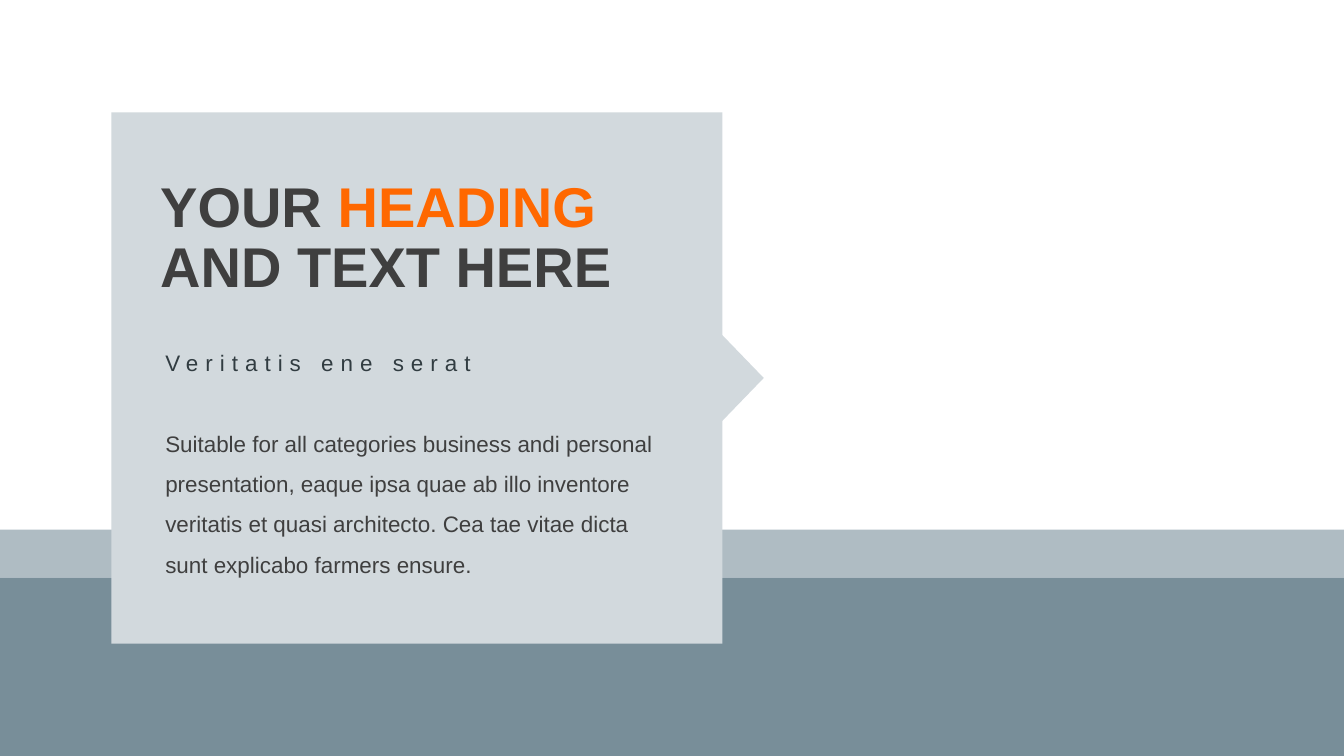
from lxml import etree
from pptx import Presentation
from pptx.dml.color import RGBColor
from pptx.enum.shapes import MSO_SHAPE
from pptx.oxml.ns import qn
from pptx.util import Inches, Pt

COLORS = {"slate": "788E99", "card": "D2D9DD", "dark": "3F3F3F",
          "orange": "FF6800", "ink": "313C41"}

deck = Presentation()
deck.slide_width, deck.slide_height = Inches(26.66), Inches(15)
slide = deck.slides.add_slide(deck.slide_layouts[6])
shapes = slide.shapes


def paint(shape, color):
    shape.shadow.inherit = False
    shape.fill.solid()
    shape.fill.fore_color.rgb = RGBColor.from_string(COLORS[color])
    shape.line.fill.background()


def write(para, text, size, color, bold=False):
    run = para.add_run()
    run.text = text
    font = run.font
    font.name, font.size, font.bold = "Arial", Pt(size), bold
    font.color.rgb = RGBColor.from_string(COLORS[color])
    return run


# Floor, pale band and card
blocks = []
for left, top, width, height, color in [
    (0, 11.46, 26.66, 3.54, "slate"),
    (0, 10.51, 26.66, 0.95, "slate"),
    (2.21, 2.23, 12.12, 10.54, "card"),
]:
    block = shapes.add_shape(MSO_SHAPE.RECTANGLE, Inches(left), Inches(top),
                             Inches(width), Inches(height))
    paint(block, color)
    blocks.append(block)

# The band is see-through
tint = blocks[1].fill._xPr.find(qn("a:solidFill"))[0]
etree.SubElement(tint, qn("a:alpha")).set("val", "59000")

# Pointer on the card's right side
build = shapes.build_freeform(Inches(15.15), Inches(7.5))
build.add_line_segments([(Inches(14.3), Inches(8.38)),
                         (Inches(14.3), Inches(6.62))], close=True)
paint(build.convert_to_shape(), "card")

# Heading
head = shapes.add_textbox(Inches(3.08), Inches(3.5), Inches(11.66), Inches(2.9)).text_frame
head.word_wrap = True
first, second = head.paragraphs[0], head.add_paragraph()
first.line_spacing = second.line_spacing = 0.9
write(first, "YOUR ", 80, "dark", True)
write(first, "HEADING", 80, "orange", True)
write(second, "AND TEXT HERE", 80, "dark", True)

# Spaced subtitle and body
body = shapes.add_textbox(Inches(3.18), Inches(6.61), Inches(10.23), Inches(6.17)).text_frame
body.word_wrap = True
lead, main = body.paragraphs[0], body.add_paragraph()
lead.line_spacing = main.line_spacing = 1.5
main.space_before = Pt(57.6)
run = write(lead, "Veritatis ene serat", 32, "ink")
run.font._element.set("spc", "1000")
write(main, "Suitable for all categories business andi personal presentation, "
      "eaque ipsa quae ab illo inventore veritatis et quasi architecto. "
      "Cea tae vitae dicta sunt explicabo farmers ensure.", 32, "dark")

deck.save("out.pptx")
